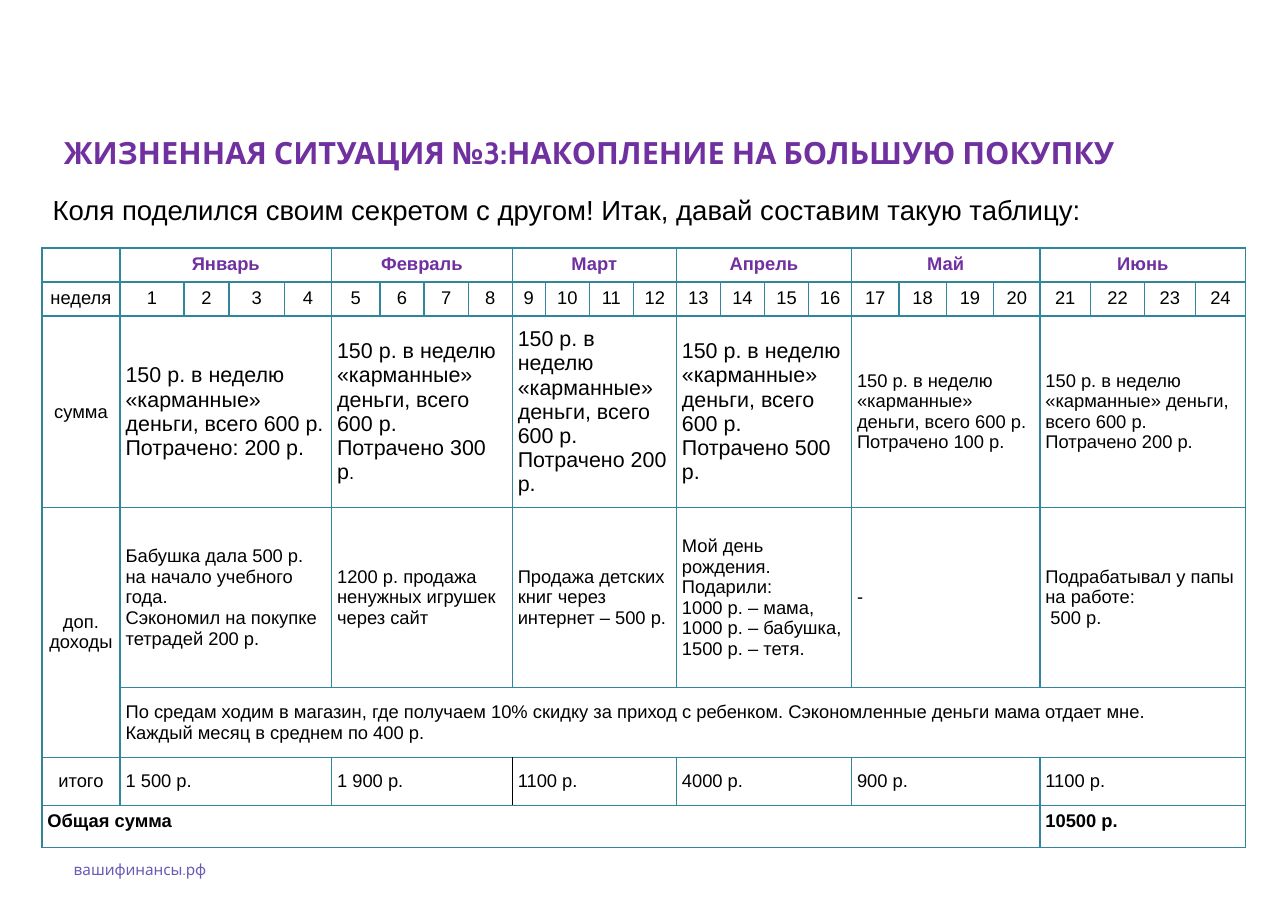
from lxml import etree
from pptx import Presentation
from pptx.dml.color import RGBColor
from pptx.enum.text import MSO_ANCHOR, PP_ALIGN
from pptx.oxml.ns import qn
from pptx.util import Inches, Pt

LEFT, CENTER = PP_ALIGN.LEFT, PP_ALIGN.CENTER
TOP, MIDDLE = MSO_ANCHOR.TOP, MSO_ANCHOR.MIDDLE

COLORS = {"purple": "7030A0", "site": "685BB6", "text": "000000", "grid": "31859C"}

TITLE = "ЖИЗНЕННАЯ СИТУАЦИЯ №3:НАКОПЛЕНИЕ НА БОЛЬШУЮ ПОКУПКУ"
INTRO = "Коля поделился своим секретом с другом! Итак, давай составим такую таблицу:"
SITE = "вашифинансы.рф"

MONTHS = ["Январь", "Февраль", "Март", "Апрель", "Май", "Июнь"]
# Cells are lists of paragraphs; a paragraph is a list of (text, size) runs.
POCKET_MONEY = [
    [[("150 р. в неделю «карманные» деньги, всего 600 р. Потрачено: 200 р.", 14)]],
    [[("150 р. в неделю «карманные» деньги, всего 600 р. Потрачено 300 р", 14), (".", 12)]],
    [[("150 р. в неделю «карманные» деньги, всего", 14)], [("600 р. Потрачено 200 р.", 14)]],
    [[("150 р. в неделю «карманные» деньги, всего 600 р.", 14)], [("Потрачено 500 р.", 14)]],
    [[("150 р. в неделю «карманные» деньги, всего 600 р. Потрачено 100 р.", 12)]],
    [[("150 р. в неделю «карманные» деньги, всего 600 р. Потрачено 200 р.", 12)]],
]
EXTRA_INCOME = [
    ["Бабушка дала 500 р. на начало учебного года.", "Сэкономил на покупке тетрадей 200 р."],
    ["1200 р. продажа ненужных игрушек через сайт"],
    ["Продажа детских книг через интернет – 500 р."],
    ["Мой день рождения.", "Подарили:", "1000 р. – мама,", "1000 р. – бабушка,",
     "1500 р. – тетя."],
    ["-"],
    ["Подрабатывал у папы на работе:", " 500 р."],
]
DISCOUNT = [
    "По средам ходим в магазин, где получаем 10% скидку за приход с ребенком. "
    "Сэкономленные деньги мама отдает мне.",
    "Каждый месяц в среднем по 400 р.",
]
TOTALS = ["1 500 р.", "1 900 р.", "1100 р.", "4000 р.", "900 р.", "1100 р."]

WEEKS = 4
LABEL_WIDTH = 0.71
WEEK_WIDTHS = [
    0.58, 0.41, 0.5, 0.43,
    0.44, 0.4, 0.4, 0.4,
    0.3, 0.4, 0.4, 0.39,
    0.4, 0.4, 0.4, 0.39,
    0.43, 0.43, 0.43, 0.42,
    0.46, 0.49, 0.46, 0.46,
]
ROW_HEIGHTS = [0.31, 0.31, 1.63, 1.64, 0.63, 0.44, 0.38]
HEAD, WEEK, MONEY, EXTRA, SHOP, SUM, GRAND = range(len(ROW_HEIGHTS))


def add_run(p, text, size, color="text", bold=False, font="Arial"):
    r = p.add_run()
    r.text = text
    r.font.name, r.font.size, r.font.bold = font, Pt(size), bold
    r.font.color.rgb = RGBColor.from_string(COLORS[color])


def add_text(slide, box, text, size, color, font, anchor):
    tf = slide.shapes.add_textbox(*map(Inches, box)).text_frame
    tf.word_wrap = True
    tf.vertical_anchor = anchor
    add_run(tf.paragraphs[0], text, size, color, font=font)


def set_border(cell, side, color):
    tag = qn("a:ln" + side)
    tc_pr = cell._tc.get_or_add_tcPr()
    ln = tc_pr.find(tag)
    if ln is None:
        ln = etree.SubElement(tc_pr, tag, w=str(Pt(1)))
        fill = etree.SubElement(ln, qn("a:solidFill"))
        etree.SubElement(fill, qn("a:srgbClr"))
    ln.find(".//" + qn("a:srgbClr")).set("val", color)


def put(table, row, col, paragraphs, cols=1, rows=1, align=LEFT, anchor=MIDDLE,
        color="text", bold=False):
    """Merge the cell over its span and write plain or run-by-run paragraphs."""
    cell = table.cell(row, col)
    if cols * rows > 1:
        cell.merge(table.cell(row + rows - 1, col + cols - 1))
    cell.vertical_anchor = anchor
    tf = cell.text_frame
    for i, runs in enumerate(paragraphs):
        p = tf.add_paragraph() if i else tf.paragraphs[0]
        p.alignment = align
        for text, size in [(runs, 12)] if isinstance(runs, str) else runs:
            add_run(p, text, size, color, bold)


def add_savings_table(slide):
    widths = [LABEL_WIDTH] + WEEK_WIDTHS
    frame = slide.shapes.add_table(
        len(ROW_HEIGHTS), len(widths), Inches(0.38), Inches(2.25),
        Inches(sum(widths)), Inches(sum(ROW_HEIGHTS)))
    table = frame.table
    table.first_row = table.horz_banding = False
    for column, width in zip(table.columns, widths):
        column.width = Inches(width)
    for row, height in zip(table.rows, ROW_HEIGHTS):
        row.height = Inches(height)
    for cell in table.iter_cells():
        for side in "LRTB":
            set_border(cell, side, COLORS["grid"])
        cell.fill.background()
        cell.margin_left = cell.margin_right = Inches(0.05)
        cell.margin_top = cell.margin_bottom = Inches(0.05)
        etree.SubElement(cell.text_frame.paragraphs[0]._p, qn("a:endParaRPr"), sz="1200")

    put(table, WEEK, 0, ["неделя"], align=CENTER, anchor=TOP)
    put(table, MONEY, 0, ["сумма"], align=CENTER)
    put(table, EXTRA, 0, ["доп. доходы"], rows=2, align=CENTER)
    put(table, SUM, 0, ["итого"], align=CENTER)

    for week in range(1, len(widths)):
        put(table, WEEK, week, [str(week)], align=CENTER, anchor=TOP)
    for i, month in enumerate(MONTHS):
        col = 1 + i * WEEKS
        put(table, HEAD, col, [month], WEEKS, align=CENTER, anchor=TOP,
            color="purple", bold=True)
        put(table, MONEY, col, POCKET_MONEY[i], WEEKS)
        put(table, EXTRA, col, EXTRA_INCOME[i], WEEKS)
        put(table, SUM, col, [TOTALS[i]], WEEKS)
    put(table, SHOP, 1, DISCOUNT, len(WEEK_WIDTHS))

    june = 1 + (len(MONTHS) - 1) * WEEKS
    put(table, GRAND, 0, ["Общая сумма"], june, anchor=TOP, bold=True)
    put(table, GRAND, june, ["10500 р."], WEEKS, anchor=TOP, bold=True)

    march = 1 + MONTHS.index("Март") * WEEKS
    for col, side in ((march - WEEKS, "R"), (march - 1, "R"), (march, "L")):
        set_border(table.cell(SUM, col), side, COLORS["text"])


def main():
    prs = Presentation()
    prs.slide_width, prs.slide_height = Inches(11.69), Inches(8.27)
    slide = prs.slides.add_slide(prs.slide_layouts[5])

    title = slide.shapes.title
    title.left, title.top, title.width, title.height = map(Inches, (0.58, 0.36, 10.52, 2.05))
    tf = title.text_frame
    tf.margin_left = tf.margin_right = tf.margin_top = tf.margin_bottom = 0
    tf.word_wrap = True
    tf.vertical_anchor = MIDDLE
    tf.paragraphs[0].alignment = LEFT
    add_run(tf.paragraphs[0], TITLE, 20, "purple", True, "Cabin")

    add_text(slide, (0.38, 1.7, 10.35, 0.71), INTRO, 18, "text", "Arial", TOP)
    add_savings_table(slide)
    add_text(slide, (0.57, 7.67, 3.97, 0.44), SITE, 10, "site", "Cabin", MIDDLE)
    prs.save("out.pptx")


if __name__ == "__main__":
    main()
